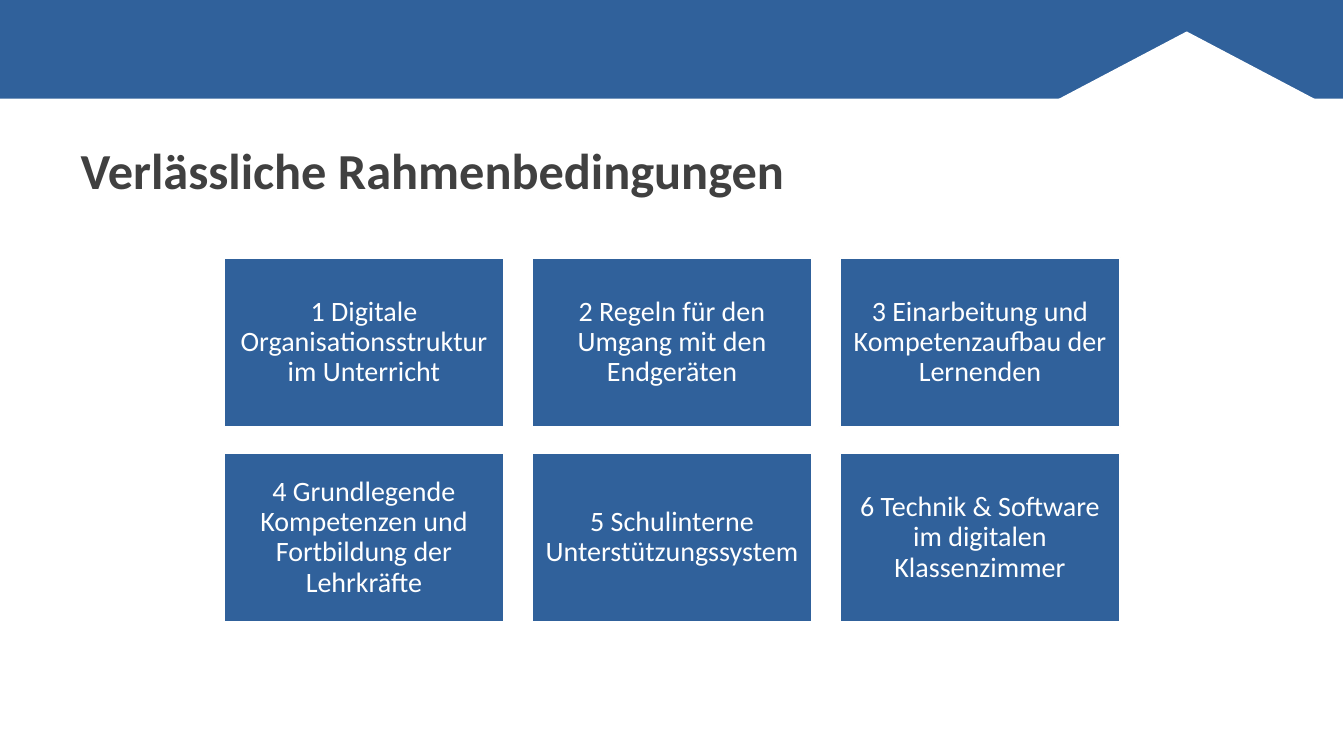
from pptx import Presentation
from pptx.dml.color import RGBColor
from pptx.enum.shapes import MSO_SHAPE
from pptx.enum.text import MSO_ANCHOR, MSO_AUTO_SIZE, PP_ALIGN
from pptx.util import Inches, Pt

COLOURS = {"blue": "30619B", "white": "FFFFFF", "title": "404040"}
FONT = "Calibri"
COLUMNS = 3
GRID_LEFT, GRID_TOP = 2.22, 2.56
CARD_WIDTH, CARD_HEIGHT = 2.78, 1.67
COLUMN_STEP, ROW_STEP = 3.055, 1.94
CONDITIONS = [
    "1 Digitale Organisationsstruktur im Unterricht",
    "2 Regeln für den Umgang mit den Endgeräten",
    "3 Einarbeitung und Kompetenzaufbau der Lernenden",
    "4 Grundlegende Kompetenzen und Fortbildung der Lehrkräfte",
    "5 Schulinterne Unterstützungssystem",
    "6 Technik & Software im digitalen Klassenzimmer",
]


def colour(name):
    """Return the named colour."""
    return RGBColor.from_string(COLOURS[name])


def write_text(box, text, *, size, ink, bold=False, align=PP_ALIGN.LEFT,
               anchor=MSO_ANCHOR.MIDDLE, side_inset=0.1, top_inset=0.05):
    """Put one formatted paragraph into a shape."""
    frame = box.text_frame
    frame.word_wrap = True
    frame.auto_size = MSO_AUTO_SIZE.NONE
    frame.vertical_anchor = anchor
    frame.margin_left = frame.margin_right = Inches(side_inset)
    frame.margin_top = frame.margin_bottom = Inches(top_inset)
    para = frame.paragraphs[0]
    para.alignment = align
    para.line_spacing = 0.9
    para.space_before = Pt(0)
    span = para.add_run()
    span.text = text
    span.font.name = FONT
    span.font.size = Pt(size)
    span.font.bold = bold
    span.font.color.rgb = colour(ink)


def add_block(page, kind, left, top, width, height, *, fill, line=None):
    """Add a filled preset shape, placed in inches."""
    block = page.shapes.add_shape(
        kind, Inches(left), Inches(top), Inches(width), Inches(height))
    block.shadow.inherit = False
    block.fill.solid()
    block.fill.fore_color.rgb = colour(fill)
    if line:
        block.line.color.rgb = colour(line)
        block.line.width = Pt(1)
    else:
        block.line.fill.background()
    return block


def add_header(page):
    """Add the blue band with its white roof."""
    add_block(page, MSO_SHAPE.RECTANGLE, -0.01, 0, 13.33, 0.98, fill="blue")
    add_block(page, MSO_SHAPE.ISOSCELES_TRIANGLE, 9.55, 0.32, 4.44, 1.17,
              fill="white", line="white")


def add_title(page, text):
    """Place the title in front of the header and format it."""
    title = page.shapes.title
    title.left, title.top = Inches(0.7), Inches(1.14)
    title.width, title.height = Inches(11.78), Inches(0.9)
    write_text(title, text, size=36, ink="title", bold=True,
               anchor=MSO_ANCHOR.BOTTOM)
    title.element.getparent().append(title.element)


def add_cards(page, texts):
    """Lay out the conditions as a grid of cards."""
    for index, text in enumerate(texts):
        row, column = divmod(index, COLUMNS)
        card = add_block(page, MSO_SHAPE.RECTANGLE,
                         GRID_LEFT + column * COLUMN_STEP,
                         GRID_TOP + row * ROW_STEP,
                         CARD_WIDTH, CARD_HEIGHT, fill="blue", line="white")
        write_text(card, text, size=20, ink="white", align=PP_ALIGN.CENTER,
                   side_inset=0.08, top_inset=0.08)


def main():
    """Build and save the slide."""
    deck = Presentation()
    deck.slide_width, deck.slide_height = Inches(13.33), Inches(7.5)
    page = deck.slides.add_slide(deck.slide_layouts.get_by_name("Title Only"))
    add_header(page)
    add_title(page, "Verlässliche Rahmenbedingungen")
    add_cards(page, CONDITIONS)
    deck.save("out.pptx")


if __name__ == "__main__":
    main()
